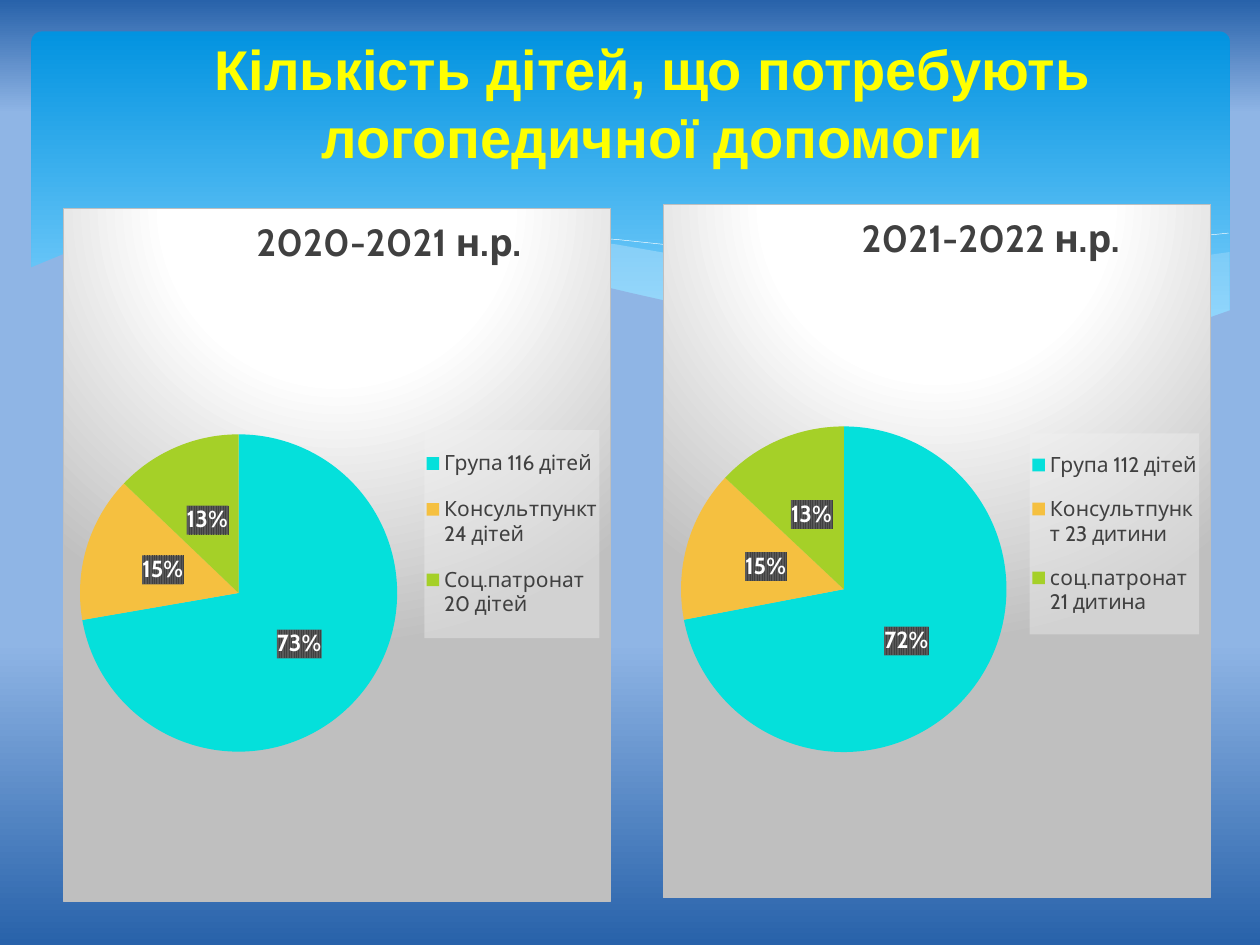
import pptx
import pptx.chart.data
import pptx.dml.color
import pptx.enum.chart
import pptx.enum.shapes
import pptx.enum.text
import pptx.oxml
import pptx.oxml.ns
import pptx.util

Inches, Pt = pptx.util.Inches, pptx.util.Pt
HUES = {
    "deep": "2862AA", "sky": "8FB5E5", "top": "0293E0", "low": "83D3FE",
    "wave": "C6E7FC", "white": "FFFFFF", "gray": "BFBFBF", "text": "404040",
    "title": "FFFF00", "key": "F2F2F2", "stripe": "595959",
}
SLICES = ["05E0DB", "F5C040", "A5D028"]
DOWN = '<a:lin ang="5400000" scaled="0"/>'
GLOW = ('<a:path path="circle"><a:fillToRect l="50000" t="-80000" '
        'r="50000" b="180000"/></a:path>')
BACK = [(6.61, 2.65), (7.06, 2.57), (7.53, 2.48), (8.05, 2.37), (8.61, 2.23),
        (8.91, 2.16), (9.21, 2.1), (9.48, 2.04), (9.76, 2), (9.76, 2.47),
        (9.49, 2.57), (9.21, 2.65), (8.89, 2.72), (8.54, 2.76), (8.14, 2.78),
        (7.69, 2.77), (7.19, 2.72)]
MID = [(2.86, 1.91), (3.28, 1.87), (3.61, 1.85), (3.99, 1.86), (4.42, 1.89),
       (4.89, 1.94), (5.41, 2.03), (5.98, 2.14), (6.68, 2.31), (7.41, 2.47),
       (8.07, 2.6), (8.93, 2.73), (8.57, 2.77), (8.18, 2.78), (7.73, 2.77),
       (7.22, 2.74), (6.65, 2.66), (6.01, 2.55), (5.3, 2.4), (4.49, 2.22),
       (4.04, 2.11), (3.42, 1.99)]
LONG = [(3.09, 1.95), (3.44, 1.9), (3.87, 1.87), (4.33, 1.87), (4.89, 1.9),
        (5.56, 1.97), (6.36, 2.08), (7.27, 2.26), (8.31, 2.51), (9.07, 2.72)]
SHORT = [(6.13, 2.57), (6.72, 2.41), (7.48, 2.23), (8.06, 2.1), (8.66, 1.99),
         (9.24, 1.9), (9.75, 1.85)]
FRONT = [(9.77, 2.46), (9.4, 2.59), (8.99, 2.69), (8.5, 2.75), (7.93, 2.76),
         (7.26, 2.72), (6.48, 2.62), (5.79, 2.5), (5.03, 2.33), (4.18, 2.13),
         (3.4, 1.97), (2.71, 1.88), (2.11, 1.84), (1.61, 1.84), (1.19, 1.87),
         (0.85, 1.93), (0.52, 2.01), (0.23, 2.13), (0.23, 3.29), (9.77, 3.29)]


def rgb(name):
    """Return the colour of a name or hex string."""
    return pptx.dml.color.RGBColor.from_string(HUES.get(name, name))


def xml(tag, body, attrs=""):
    """Parse an element with the drawing and chart namespaces."""
    names = pptx.oxml.ns.nsdecls("a", "c")
    return pptx.oxml.parse_xml(f"<{tag} {names} {attrs}>{body}</{tag}>")


def tint(name, alpha=100):
    """Return the XML of a colour with its opacity."""
    return (f'<a:srgbClr val="{HUES[name]}">'
            f'<a:alpha val="{alpha * 1000}"/></a:srgbClr>')


def solid(name, alpha=100):
    """Return the XML of a plain fill."""
    return f"<a:solidFill>{tint(name, alpha)}</a:solidFill>"


def blend(stops, way):
    """Return the XML of a gradient's contents."""
    marks = "".join(f'<a:gs pos="{at * 1000}">{tint(name)}</a:gs>'
                    for at, name in stops)
    return f"<a:gsLst>{marks}</a:gsLst>{way}"


def shade(fill, root, stops):
    """Give a fill a vertical gradient."""
    fill.gradient()
    old = root.find(".//" + pptx.oxml.ns.qn("a:gradFill"))
    old.getparent().replace(old, xml("a:gradFill", blend(stops, DOWN)))


def trace(slide, dots, closed=True):
    """Draw an outline through points given in inches."""
    spots = [(Inches(x), Inches(y)) for x, y in dots]
    pen = slide.shapes.build_freeform(*spots[0])
    pen.add_line_segments(spots[1:], close=closed)
    form = pen.convert_to_shape()
    form.shadow.inherit = False
    return form


def wave(slide, dots, name, alpha=100):
    """Draw a filled wave."""
    form = trace(slide, dots)
    form.fill.solid()
    form.fill.fore_color.rgb = rgb(name)
    hue = form._element.find(".//" + pptx.oxml.ns.qn("a:srgbClr"))
    hue.append(xml("a:alpha", "", f'val="{alpha * 1000}"'))
    form.line.fill.background()


def curve(slide, dots):
    """Draw a thin white curve."""
    form = trace(slide, dots, False)
    form.fill.background()
    form.line.color.rgb = rgb("white")
    form.line.width = Pt(0.25)


def panel(slide):
    """Draw the blue header panel."""
    form = slide.shapes.add_shape(
        pptx.enum.shapes.MSO_SHAPE.ROUNDED_RECTANGLE,
        Inches(0.25), Inches(0.25), Inches(9.51), Inches(2.7))
    form.adjustments[0] = 0.03
    form.shadow.inherit = False
    form.line.fill.background()
    shade(form.fill, form._element, [(0, "top"), (90, "low")])


def style(font, size, name, bold=False, face="Cabin"):
    """Set the face, size, weight and colour of a font."""
    font.name, font.size, font.bold = face, Pt(size), bold
    font.color.rgb = rgb(name)


def head(slide, text):
    """Add the slide title."""
    box = slide.shapes.add_textbox(
        Inches(0.57), Inches(0.25), Inches(9.22), Inches(1.12))
    frame = box.text_frame
    frame.word_wrap = True
    frame.vertical_anchor = pptx.enum.text.MSO_ANCHOR.MIDDLE
    frame.text = text
    line = frame.paragraphs[0]
    line.alignment = pptx.enum.text.PP_ALIGN.CENTER
    style(line.runs[0].font, 32, "title", True, "Arial")


def place(node, spots, inner=False):
    """Give a chart part its place as shares of the chart."""
    for old in node.findall(pptx.oxml.ns.qn("c:layout")):
        node.remove(old)
    body = '<c:layoutTarget val="inner"/>' if inner else ""
    body += '<c:xMode val="edge"/><c:yMode val="edge"/>'
    body += "".join(f'<c:{key} val="{val}"/>' for key, val in zip("xywh", spots))
    lay = xml("c:layout", f"<c:manualLayout>{body}</c:manualLayout>")
    tags = ("c:tx", "c:legendPos", "c:legendEntry")
    prior = [kid for kid in node if kid.tag in map(pptx.oxml.ns.qn, tags)]
    node.insert(node.index(prior[-1]) + 1 if prior else 0, lay)


def pie(slide, left, top, title, cats, vals, spots):
    """Add a pie chart with title, legend and percent labels."""
    data = pptx.chart.data.CategoryChartData()
    data.categories = cats
    data.add_series("Series 1", vals)
    chart = slide.shapes.add_chart(
        pptx.enum.chart.XL_CHART_TYPE.PIE, Inches(left), Inches(top),
        Inches(4.35), Inches(5.51), data).chart
    chart.font.name, chart.font.size = "Cabin", Pt(10)
    chart.has_title = True
    frame = chart.chart_title.text_frame
    frame.text = title
    style(frame.paragraphs[0].runs[0].font, 21.6, "text", True)
    chart.has_legend = True
    key = chart.legend
    key.position = pptx.enum.chart.XL_LEGEND_POSITION.RIGHT
    key.include_in_layout = False
    style(key.font, 12, "text")
    plot = chart.plots[0]
    plot.vary_by_categories = True
    for i, hue in enumerate(SLICES):
        fill = plot.series[0].points[i].format.fill
        fill.solid()
        fill.fore_color.rgb = rgb(hue)
    plot.has_data_labels = True
    tags = plot.data_labels
    tags.show_percentage, tags.show_value = False, True
    tags.number_format, tags.number_format_is_linked = '0"%"', False
    tags.position = pptx.enum.chart.XL_LABEL_POSITION.CENTER
    style(tags.font, 13.3, "white", True)
    stripe = (f'<a:pattFill prst="narVert"><a:fgClr>{tint("text")}</a:fgClr>'
              f'<a:bgClr>{tint("stripe")}</a:bgClr></a:pattFill>')
    back = blend([(0, "white"), (39, "white"), (100, "gray")], GLOW)
    edge = f'<a:ln w="9525">{solid("gray")}</a:ln>'
    root = chart._chartSpace
    for node, body in ((tags._element, stripe),
                       (key._element, solid("key", 39)),
                       (root, f"<a:gradFill>{back}</a:gradFill>{edge}")):
        text = node.find(pptx.oxml.ns.qn("c:txPr"))
        text.addprevious(xml("c:spPr", body))
    area = root.find(".//" + pptx.oxml.ns.qn("c:plotArea"))
    place(chart.chart_title._element, spots[0])
    place(area, spots[1], True)
    place(key._element, spots[2])


def main():
    """Build and save the slide."""
    deck = pptx.Presentation()
    deck.slide_width, deck.slide_height = Inches(10), Inches(7.5)
    slide = deck.slides.add_slide(deck.slide_layouts[6])
    shade(slide.background.fill, slide._element,
          [(0, "deep"), (12, "sky"), (68, "sky"), (100, "deep")])
    panel(slide)
    wave(slide, BACK, "wave", 29)
    wave(slide, MID, "wave", 40)
    curve(slide, LONG)
    curve(slide, SHORT)
    wave(slide, FRONT, "sky")
    head(slide, "Кількість дітей, що потребують логопедичної допомоги")
    pie(slide, 5.26, 1.62, "2021-2022 н.р.",
        ["Група 112 дітей", "Консультпункт 23 дитини", "соц.патронат 21 дитина"],
        [72, 15, 13],
        [(0.35, 0), (0.03, 0.32, 0.6, 0.47), (0.67, 0.33, 0.31, 0.29)])
    pie(slide, 0.5, 1.65, "2020-2021 н.р.",
        ["Група 116 дітей", "Консультпункт 24 дітей", "Соц.патронат 20 дітей"],
        [73, 15, 13],
        [(0.34, 0), (0.03, 0.32, 0.58, 0.47), (0.66, 0.32, 0.32, 0.3)])
    deck.save("out.pptx")


if __name__ == "__main__":
    main()
